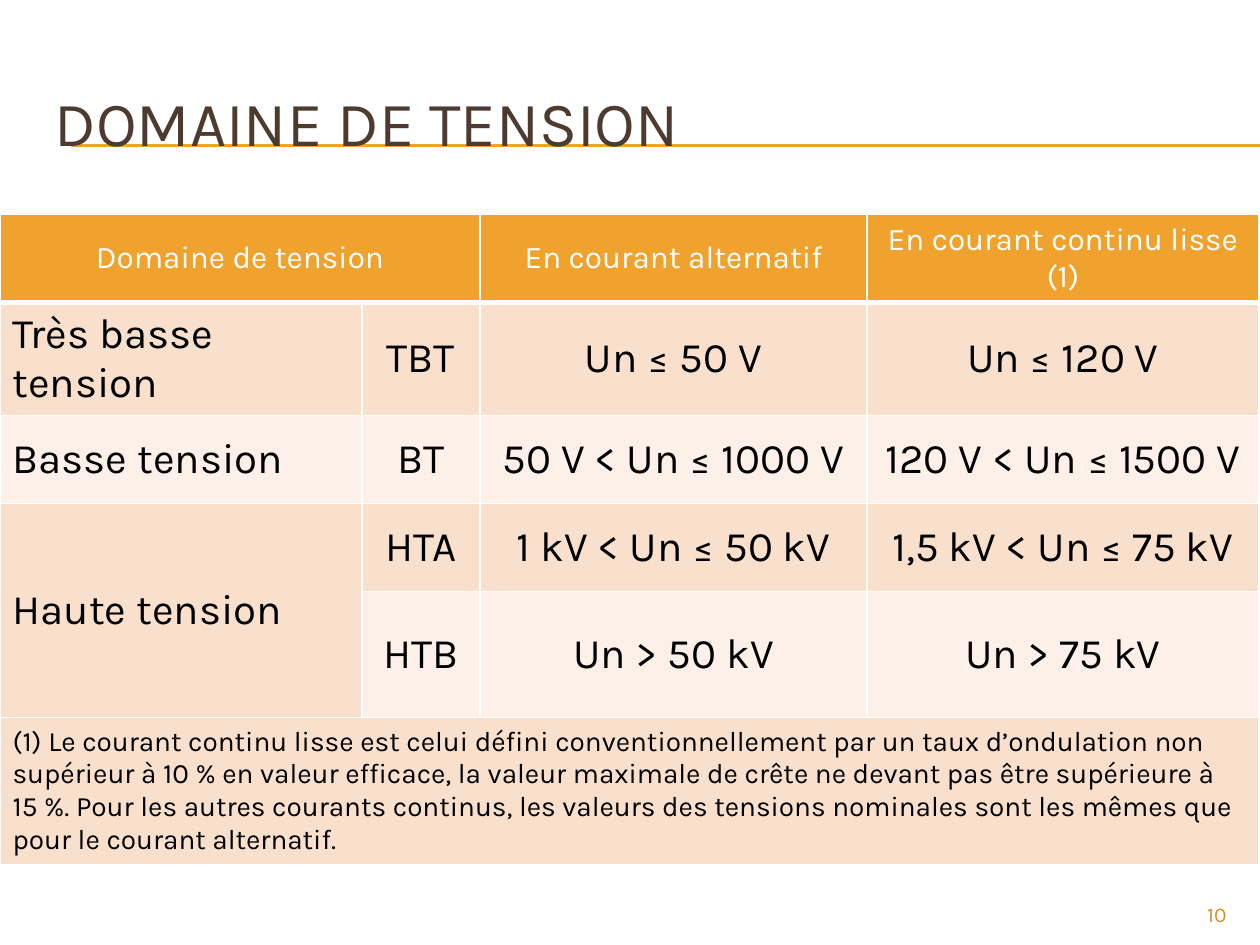
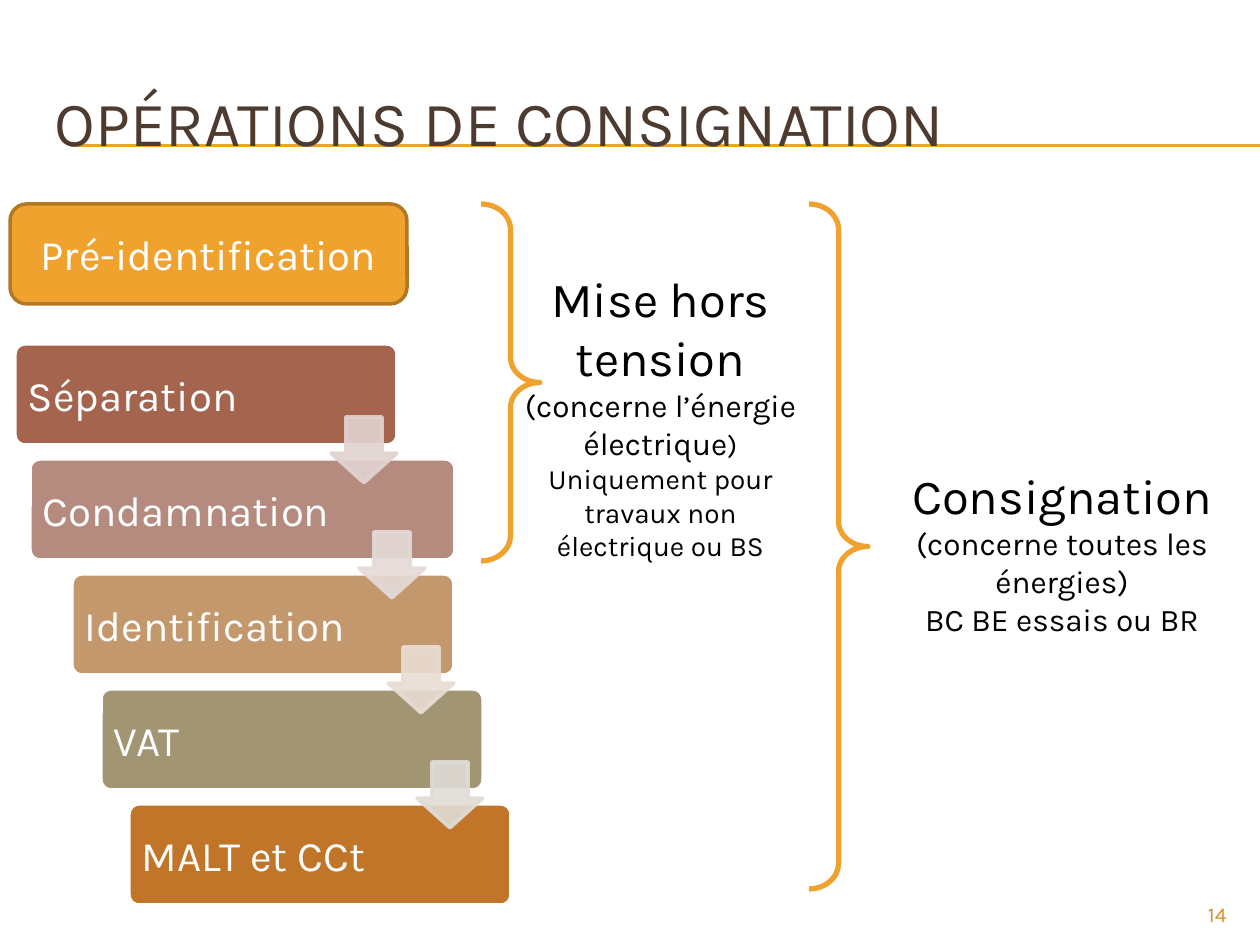
"""Build two slides on voltage ranges and lockout operations."""
from lxml.etree import SubElement
from pptx import Presentation
from pptx.dml.color import RGBColor
from pptx.enum.shapes import MSO_CONNECTOR as Link, MSO_SHAPE as Kind
from pptx.enum.text import MSO_ANCHOR as Anchor, MSO_AUTO_SIZE as Fit, PP_ALIGN as Align
from pptx.oxml.ns import qn
from pptx.util import Pt

SCALE = 914400 / 126
WIDTH, HEIGHT = 1260, 945
FACE = "Karla"
GOLD, BROWN, WHITE, BLACK = "F0A22E", "4E3B30", "FFFFFF", "000000"
DARK, PAGE, PEACH, CREAM = "B27822", "D48F29", "F9E0CD", "FCF0E8"

COLS = [362, 118, 387, 392]
ROWS = [79, 88, 88, 88, 126, 144]
CELLS = [
    ["Domaine de tension", "", "En courant alternatif", "En courant continu lisse (1)"],
    ["Très basse tension", "TBT", "Un ≤ 50 V", "Un ≤ 120 V"],
    ["Basse tension", "BT", "50 V < Un ≤ 1000 V", "120 V < Un ≤ 1500 V"],
    ["Haute tension", "HTA", "1 kV < Un ≤ 50 kV", "1,5 kV < Un ≤ 75 kV"],
    ["", "HTB", "Un > 50 kV", "Un > 75 kV"],
    ["(1) Le courant continu lisse est celui défini conventionnellement par un taux "
     "d’ondulation non supérieur à 10 % en valeur efficace, la valeur maximale de crête "
     "ne devant pas être supérieure à 15 %. Pour les autres courants continus, les "
     "valeurs des tensions nominales sont les mêmes que pour le courant alternatif.",
     "", "", ""],
]
SPANS = [((0, 0), (0, 1)), ((3, 0), (4, 0)), ((5, 0), (5, 3))]
FILLS = [GOLD, PEACH, CREAM, PEACH, CREAM, PEACH]
SIZES = [18, 24, 24, 24, 24, 16]

STEPS = [
    ("Séparation", 15, 382, "A5644E"),
    ("Condamnation", 30, 425, "B58B80"),
    ("Identification", 72, 382, "C3986D"),
    ("VAT", 101, 382, "A19574"),
    ("MALT et CCt", 129, 382, "C17529"),
]
ARROWS = ["E1D3D0", "E5DAD8", "E9DDD4", "E0DDD6"]
BRACES = [(481, 204, 59, 357), (809, 204, 59, 685)]
NOTES = [
    ((512, 262, 297, 310), [
        [("Mise hors tension", 28)],
        [("(concerne l’énergie électrique", 18), (")", 16)],
        [("Uniquement pour travaux non électrique ou BS", 16)]]),
    ((888, 459, 348, 186), [
        [("Consignation", 28)],
        [("(concerne toutes les énergies)", 18)],
        [("BC BE essais ou BR", 18)]]),
]


def px(*vals):
    return [round(v * SCALE) for v in vals]


def tint(code):
    return RGBColor.from_string(code)


def put(thing, **vals):
    for name, val in vals.items():
        setattr(thing, name, val)


def write(frame, paras, color, align=Align.LEFT, **vals):
    put(frame, word_wrap=True, **vals)
    for i, runs in enumerate(paras):
        para = frame.add_paragraph() if i else frame.paragraphs[0]
        para.alignment = align
        for text, size in runs:
            run = para.add_run()
            run.text = text
            put(run.font, name=FACE, size=Pt(size), bold=False)
            run.font.color.rgb = tint(color)


def box(slide, area, paras, color, align):
    frame = slide.shapes.add_textbox(*px(*area)).text_frame
    write(frame, paras, color, align)


def draw(slide, kind, area, fill, line, width, adjs=()):
    shape = slide.shapes.add_shape(kind, *px(*area))
    shape.shadow.inherit = False
    for i, val in enumerate(adjs):
        shape.adjustments[i] = val
    if fill:
        shape.fill.solid()
        shape.fill.fore_color.rgb = tint(fill)
    else:
        shape.fill.background()
    shape.line.color.rgb = tint(line)
    shape.line.width = Pt(width)
    return shape


def base(deck, title, page):
    slide = deck.slides.add_slide(deck.slide_layouts[5])
    for i, y in enumerate((145, 146)):
        rule = slide.shapes.add_connector(Link.STRAIGHT, *px(71, y, WIDTH, y))
        rule.line.color.rgb = tint(GOLD)
        rule.line.width = Pt(0.75)
        SubElement(rule._element.spPr, qn("a:effectLst"))
        slide.shapes._spTree.insert(2 + i, rule._element)
    head = slide.shapes.title
    put(head, **dict(zip(("left", "top", "width", "height"), px(42, 63, 1197, 116))))
    write(head.text_frame, [[(title, 36)]], BROWN,
          vertical_anchor=Anchor.MIDDLE, auto_size=Fit.NONE)
    box(slide, (848, 895, 391, 47), [[(page, 12)]], PAGE, Align.RIGHT)
    return slide


def edge(cell, head):
    props = cell._tc.get_or_add_tcPr()
    for side in ("lnL", "lnR", "lnT", "lnB"):
        width = 3 if head and side == "lnB" else 1
        line = SubElement(props, qn("a:" + side), w=str(Pt(width)))
        fill = SubElement(line, qn("a:solidFill"))
        SubElement(fill, qn("a:srgbClr"), val=WHITE)


def grid(slide):
    area = px(0, 214, sum(COLS), sum(ROWS))
    table = slide.shapes.add_table(len(ROWS), len(COLS), *area).table
    for col, width in zip(table.columns, px(*COLS)):
        col.width = width
    for row, height in zip(table.rows, px(*ROWS)):
        row.height = height
    for start, end in SPANS:
        table.cell(*start).merge(table.cell(*end))
    for r, texts in enumerate(CELLS):
        for c, text in enumerate(texts):
            cell = table.cell(r, c)
            edge(cell, r == 0)
            cell.fill.solid()
            cell.fill.fore_color.rgb = tint(FILLS[r])
            cell.vertical_anchor = Anchor.MIDDLE
            if text:
                align = Align.CENTER if c or not r else Align.LEFT
                write(cell.text_frame, [[(text, SIZES[r])]],
                      WHITE if r == 0 else BLACK, align)


def flow(slide):
    top, pitch = 344, 115
    inset = dict.fromkeys(("margin_left", "margin_right"), px(10)[0])
    for i, (text, left, width, fill) in enumerate(STEPS):
        step = draw(slide, Kind.ROUNDED_RECTANGLE, (left, top + i * pitch, width, 101),
                    fill, WHITE, 2, [0.1])
        write(step.text_frame, [[(text, 24)]], WHITE,
              vertical_anchor=Anchor.MIDDLE, **inset)
    for i, fill in enumerate(ARROWS):
        area = (331 + i * 86 // 3, top + 73 + i * pitch, 66, 66)
        arrow = draw(slide, Kind.DOWN_ARROW, area, fill, fill, 2, [0.55, 0.45])
        for color in arrow._element.spPr.iter(qn("a:srgbClr")):
            SubElement(color, qn("a:alpha"), val="90000")
    first = draw(slide, Kind.ROUNDED_RECTANGLE, (10, 204, 397, 100), GOLD, DARK, 2)
    write(first.text_frame, [[("Pré-identification", 24)]], WHITE, Align.CENTER,
          vertical_anchor=Anchor.MIDDLE)
    for area in BRACES:
        draw(slide, Kind.RIGHT_BRACE, area, None, GOLD, 3, [0.43, 0.5])
    for area, paras in NOTES:
        box(slide, area, paras, BLACK, Align.CENTER)


def main():
    deck = Presentation()
    deck.slide_width, deck.slide_height = px(WIDTH, HEIGHT)
    grid(base(deck, "DOMAINE DE TENSION", "10"))
    flow(base(deck, "OPÉRATIONS DE CONSIGNATION", "14"))
    deck.save("out.pptx")


if __name__ == "__main__":
    main()
